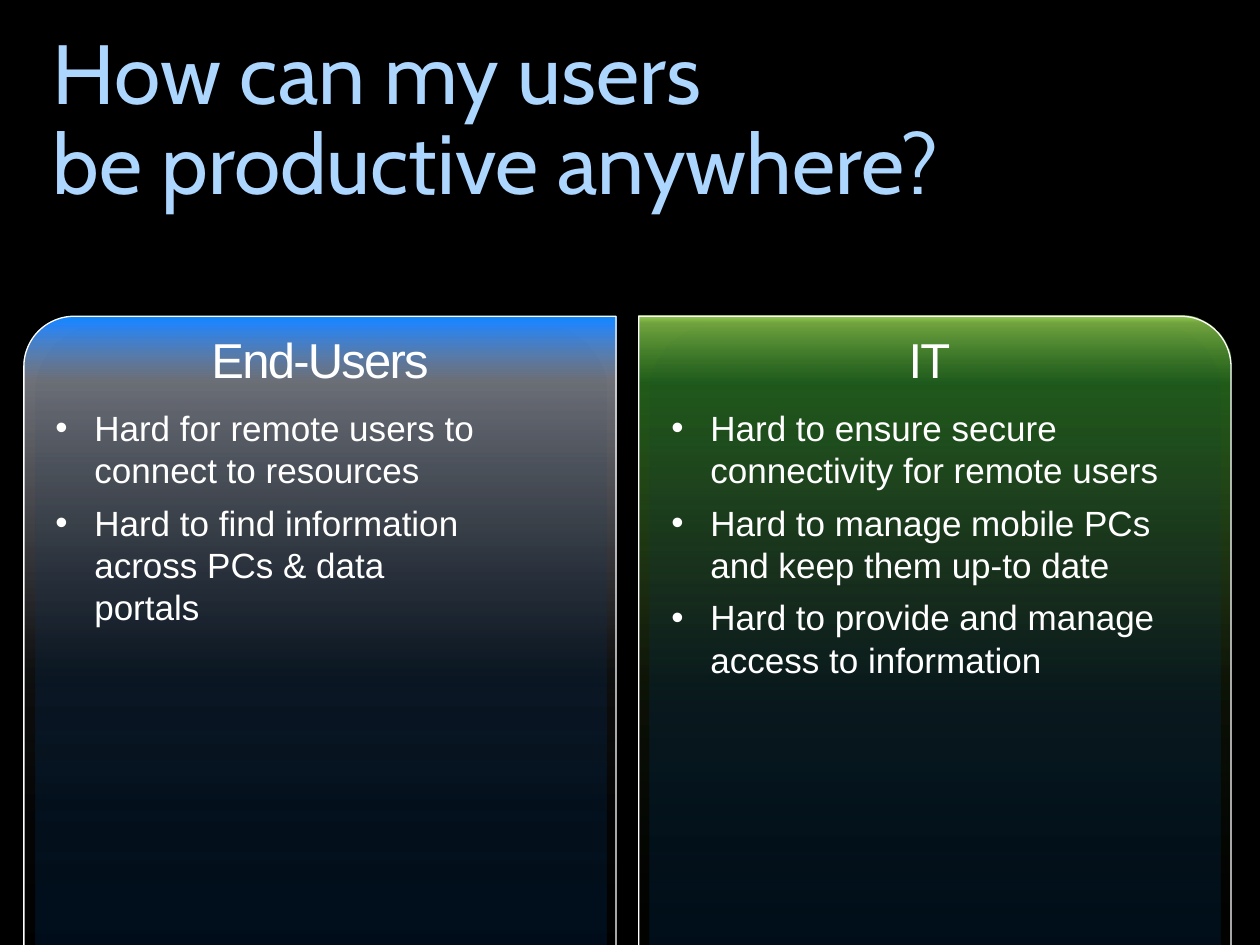
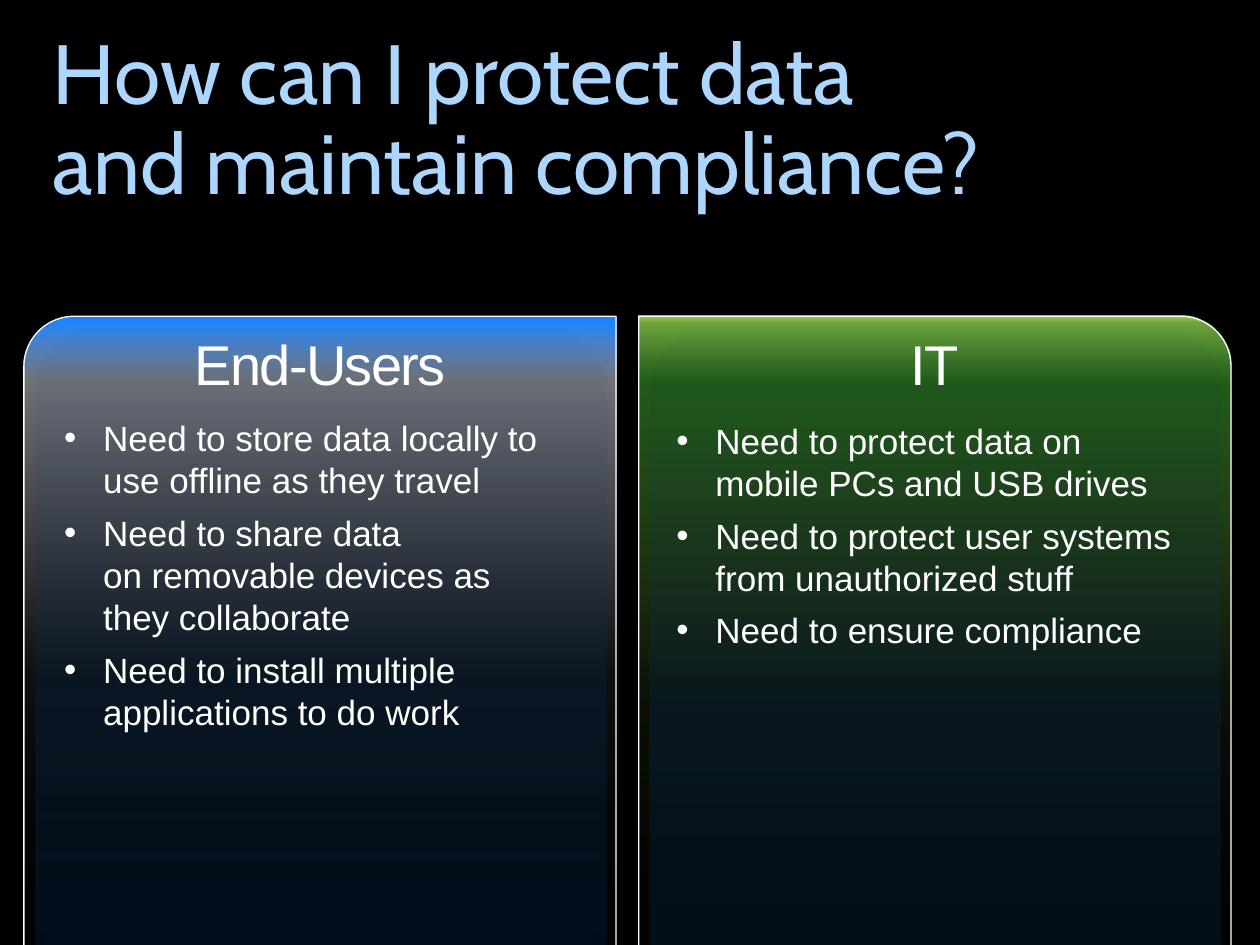
import pptx
import pptx.dml.color
import pptx.enum.shapes
import pptx.enum.text
import pptx.oxml
import pptx.oxml.ns
import pptx.util

RGBColor = pptx.dml.color.RGBColor
Inches = pptx.util.Inches
Pt = pptx.util.Pt
SHAPE = pptx.enum.shapes.MSO_SHAPE
ALIGN = pptx.enum.text.PP_ALIGN
qn = pptx.oxml.ns.qn

BLACK = RGBColor(0x00, 0x00, 0x00)
WHITE = RGBColor(0xFF, 0xFF, 0xFF)
SKY = RGBColor(0xAD, 0xD6, 0xFF)
AZURE = RGBColor(0x0E, 0x8A, 0xFA)
BLUE = RGBColor(0x23, 0x84, 0xF9)
STEEL = RGBColor(0xAA, 0xAD, 0xB8)
LIME = RGBColor(0x92, 0xD0, 0x50)
GREEN = RGBColor(0x45, 0xBD, 0x35)
NAVY = RGBColor(0x00, 0x33, 0x66)
DEEP = RGBColor(0x00, 0x3D, 0x7A)

BLUE_FADE = [(0, AZURE, 100), (1, BLUE, 100), (9, STEEL, 65), (50, STEEL, 8), (100, BLACK, 0)]
GREEN_FADE = [(0, LIME, 100), (1, LIME, 78), (9, GREEN, 48), (50, LIME, 8), (100, BLACK, 0)]
GLOW_FADE = [(0, NAVY, 25), (50, DEEP, 20), (100, NAVY, 0)]

PANELS = [
    dict(left=0.19, height=5.65, fade=BLUE_FADE, flip=True),
    dict(left=5.07, height=5.93, fade=GREEN_FADE, flip=False),
]
PANEL_WIDTH = 4.7

SLIDES = [
    dict(
        title=["How can my users ", "be productive anywhere?"],
        size=28,
        columns=[
            ("End-Users", (0.34, 3.18, 3.61, 1.87), [
                ["Hard for remote users to connect to resources"],
                ["Hard to find information across PCs & data portals"],
            ]),
            ("IT ", (5.23, 3.18, 4.23, 2.29), [
                ["Hard to ensure secure connectivity for remote users"],
                ["Hard to manage mobile PCs and keep them up-to date"],
                ["Hard to provide and manage access to information"],
            ]),
        ],
    ),
    dict(
        title=["How can I protect data ", "and maintain compliance?"],
        size=32,
        columns=[
            ("End-Users", (0.41, 3.26, 4.28, 2.63), [
                ["Need to store data locally to use offline as they travel"],
                ["Need to share data ", "on removable devices as ", "they collaborate"],
                ["Need to install multiple applications to do work"],
            ]),
            ("IT", (5.27, 3.28, 4.26, 1.95), [
                ["Need to protect data on mobile PCs and USB drives"],
                ["Need to protect user systems ", "from unauthorized stuff"],
                ["Need to ensure compliance"],
            ]),
        ],
    ),
]


def add_node(parent, tag, **attrs):
    """Append a drawing element with the given attributes."""
    node = pptx.oxml.parse_xml(f"<{tag} {pptx.oxml.ns.nsdecls('a')}/>")
    for name, value in attrs.items():
        node.set(name, str(value))
    parent.append(node)
    return node


def set_fade(shape, stops, angle):
    """Fill a shape with a see-through linear gradient."""
    shape.fill.gradient()
    grad = shape.element.spPr.find(qn("a:gradFill"))
    for child in list(grad):
        grad.remove(child)
    items = add_node(grad, "a:gsLst")
    for place, color, alpha in stops:
        stop = add_node(items, "a:gs", pos=place * 1000)
        tint = add_node(stop, "a:srgbClr", val=color)
        add_node(tint, "a:alpha", val=alpha * 1000)
    add_node(grad, "a:lin", ang=angle * 60000, scaled=0)


def add_plate(slide, kind, box, curve, stops, angle):
    """Add a rounded plate with a gradient and no outline."""
    plate = slide.shapes.add_shape(kind, *map(Inches, box))
    plate.shadow.inherit = False
    plate.adjustments[0] = curve
    set_fade(plate, stops, angle)
    plate.line.fill.background()
    return plate


def add_panel(slide, left, height, fade, flip):
    """Add an outlined panel with a soft glow inside it."""
    box = (left, 2.51, PANEL_WIDTH, height)
    panel = add_plate(slide, SHAPE.ROUND_1_RECTANGLE, box, 0.085, fade, 90)
    panel.line.color.rgb = WHITE
    panel.line.width = Pt(0.75)
    if flip:
        panel.element.spPr.find(qn("a:xfrm")).set("flipH", "1")
    box = (left + 0.09, 2.58, 4.53, 6.17)
    add_plate(slide, SHAPE.ROUND_2_SAME_RECTANGLE, box, 0.118, GLOW_FADE, 270)


def add_frame(slide, box):
    """Add a wrapping text box and return its text frame."""
    frame = slide.shapes.add_textbox(*map(Inches, box)).text_frame
    frame.word_wrap = True
    return frame


def add_lines(para, lines, size, color=WHITE, font="Arial"):
    """Write lines into a paragraph, with a break between them."""
    for index, line in enumerate(lines):
        if index:
            para.add_line_break()
        run = para.add_run()
        run.text = line
        run.font.size = Pt(size)
        run.font.name = font
        run.font.color.rgb = color


def add_title(slide, lines):
    """Add the slide title."""
    frame = add_frame(slide, (0.42, 0.25, 9.17, 1.45))
    frame.margin_left = frame.margin_right = 0
    frame.margin_top = frame.margin_bottom = 0
    para = frame.paragraphs[0]
    para.line_spacing = 0.9
    add_lines(para, lines, 48, SKY, "Cabin")


def add_head(slide, left, text, size):
    """Add a centred heading with tight letters at the top of a panel."""
    para = add_frame(slide, (left, 2.57, PANEL_WIDTH, size / 50)).paragraphs[0]
    para.alignment = ALIGN.CENTER
    add_lines(para, [text], size)
    para.runs[0].font._element.set("spc", "-100")


def add_list(slide, box, points):
    """Add a bulleted list."""
    frame = add_frame(slide, box)
    for index, lines in enumerate(points):
        para = frame.add_paragraph() if index else frame.paragraphs[0]
        props = para._p.get_or_add_pPr()
        props.set("marL", str(Inches(0.31)))
        props.set("indent", str(Inches(-0.31)))
        add_node(props, "a:buFont", typeface="Arial")
        add_node(props, "a:buChar", char="•")
        para.line_spacing = Pt(24)
        if index:
            para.space_before = Pt(6)
        add_lines(para, lines, 20)


def add_page(deck, title, size, columns):
    """Add a black slide with a title and two panels."""
    slide = deck.slides.add_slide(deck.slide_layouts[6])
    slide.background.fill.solid()
    slide.background.fill.fore_color.rgb = BLACK
    for panel, (head, box, points) in zip(PANELS, columns):
        add_panel(slide, **panel)
        add_head(slide, panel["left"], head, size)
        add_list(slide, box, points)
    add_title(slide, title)


def main():
    """Build and save the deck."""
    deck = pptx.Presentation()
    deck.slide_width = Inches(10)
    deck.slide_height = Inches(7.5)
    for page in SLIDES:
        add_page(deck, **page)
    deck.save("out.pptx")


if __name__ == "__main__":
    main()
